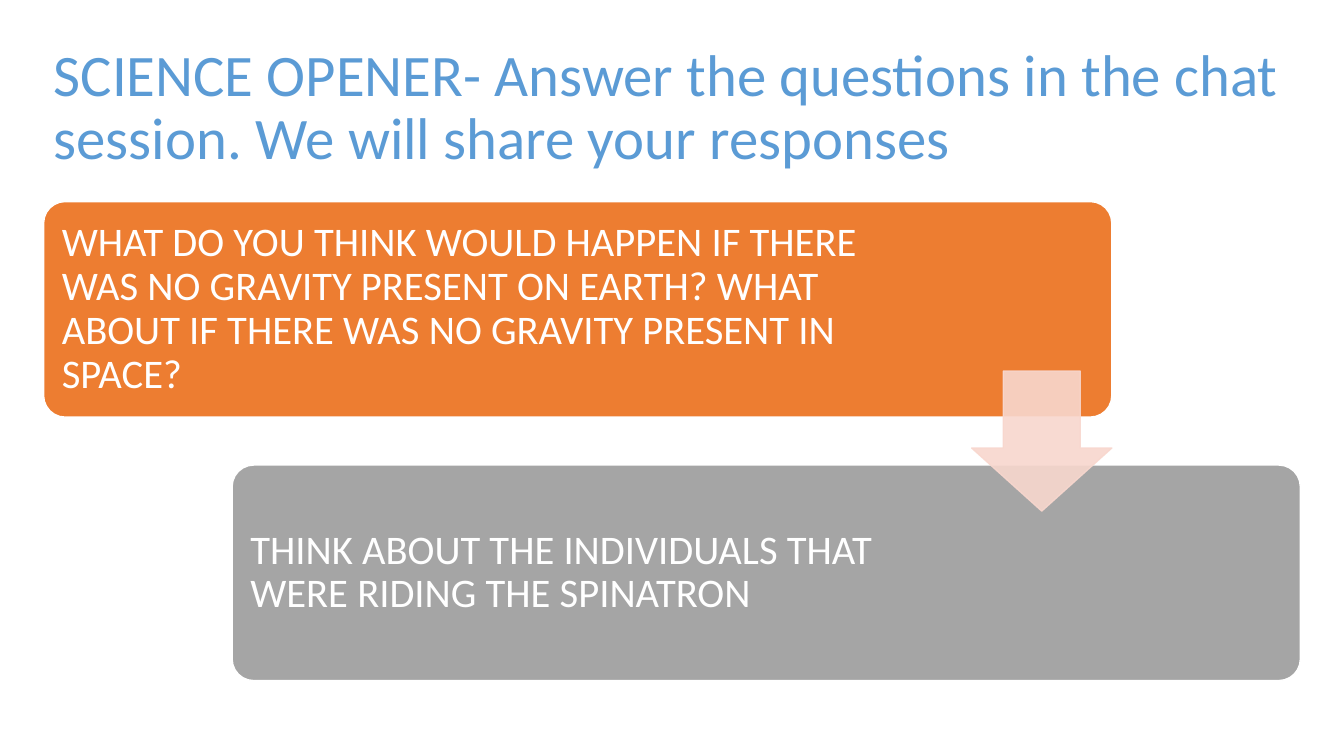
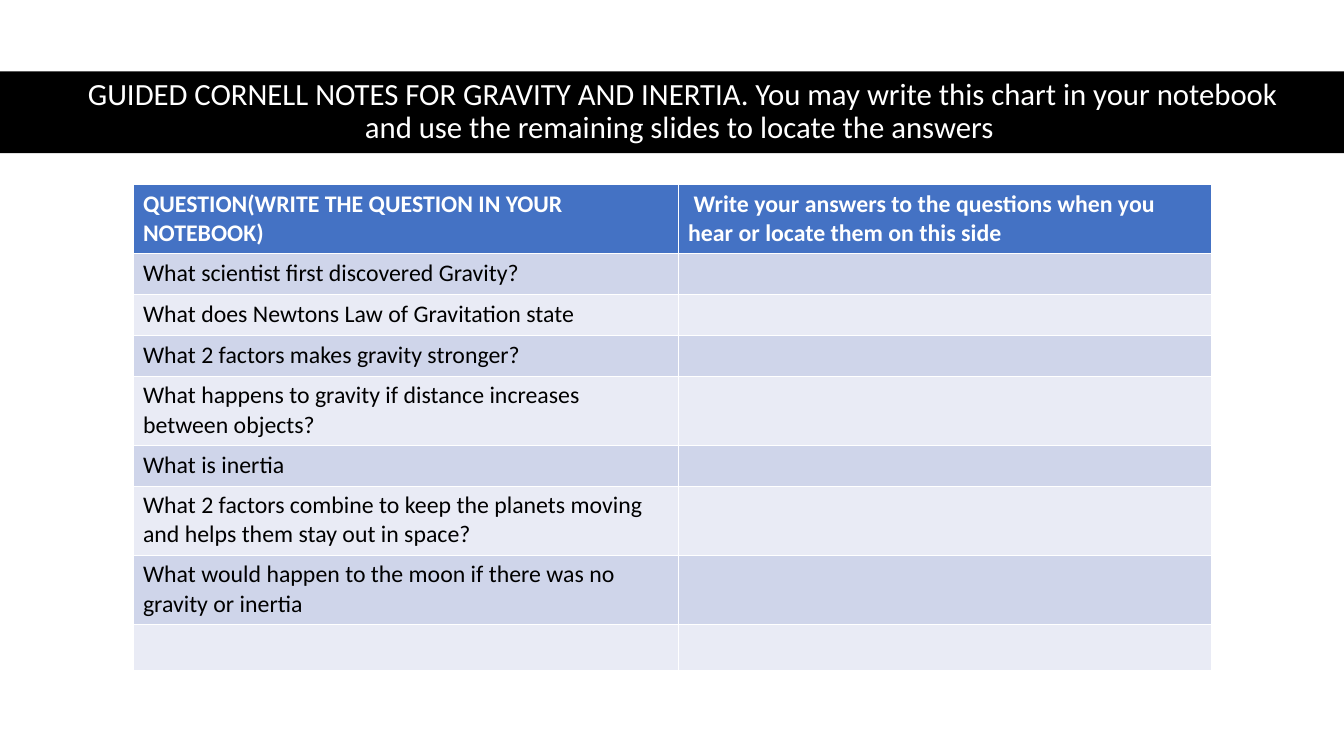
from lxml.etree import SubElement
from pptx import Presentation
from pptx.dml.color import RGBColor
from pptx.enum.shapes import MSO_SHAPE
from pptx.enum.text import MSO_ANCHOR, MSO_AUTO_SIZE, PP_ALIGN
from pptx.oxml.ns import qn
from pptx.util import Cm, Pt

# Shared look
FONT = "Calibri"
WHITE = RGBColor(0xFF, 0xFF, 0xFF)
BLACK = RGBColor(0x00, 0x00, 0x00)
SKY = RGBColor(0x5B, 0x9B, 0xD5)
ORANGE = RGBColor(0xED, 0x7D, 0x31)
GRAY = RGBColor(0xA5, 0xA5, 0xA5)
PINK = RGBColor(0xF8, 0xD7, 0xCE)
BLUE = RGBColor(0x44, 0x72, 0xC4)
BANDS = (RGBColor(0xCF, 0xD5, 0xEA), RGBColor(0xE9, 0xEB, 0xF5))

WIDE, HIGH = Cm(33.87), Cm(19.05)

# Fill, text and right inset of each card
CARDS = [
    (ORANGE, "WHAT DO YOU THINK WOULD HAPPEN IF THERE WAS NO GRAVITY PRESENT "
             "ON EARTH? WHAT ABOUT IF THERE WAS NO GRAVITY PRESENT IN SPACE?",
     Cm(5.6)),
    (GRAY, "THINK ABOUT THE INDIVIDUALS THAT WERE RIDING THE SPINATRON",
     Cm(8.58)),
]

HEADS = ["QUESTION(WRITE THE QUESTION IN YOUR NOTEBOOK)",
         " Write your answers to the questions when you hear or locate them "
         "on this side"]
# Question and number of lines it takes
ASKS = [
    ("What scientist first discovered Gravity?", 1),
    ("What does Newtons Law of Gravitation state", 1),
    ("What 2 factors makes gravity stronger?", 1),
    ("What happens to gravity if distance increases between objects?", 2),
    ("What is inertia", 1),
    ("What 2 factors combine to keep the planets moving and helps them "
     "stay out in space?", 2),
    ("What would happen to the moon if there was no gravity or inertia", 2),
]
ROWS = {1: Cm(1.03), 2: Cm(1.74)}
LAST = Cm(1.17)


def style(para, size, color, bold=False, align=PP_ALIGN.LEFT):
    para.alignment = align
    font = para.font
    font.name, font.size, font.bold = FONT, Pt(size), bold
    font.color.rgb = color


def add_slide(deck, text, box, size, color, align=PP_ALIGN.LEFT):
    """Add a title-only slide and format its title."""
    slide = deck.slides.add_slide(deck.slide_layouts[5])
    title = slide.shapes.title
    title.left, title.top, title.width, title.height = box
    frame = title.text_frame
    frame.text = text
    frame.word_wrap = True
    frame.auto_size = MSO_AUTO_SIZE.NONE
    frame.vertical_anchor = MSO_ANCHOR.MIDDLE
    para = frame.paragraphs[0]
    para.line_spacing = 0.9
    style(para, size, color, align=align)
    return slide


def add_block(slide, kind, box, fill, line=None):
    block = slide.shapes.add_shape(kind, *box)
    block.shadow.inherit = False
    block.fill.solid()
    block.fill.fore_color.rgb = fill
    if line is None:
        block.line.fill.background()
    else:
        block.line.color.rgb = line
        block.line.width = Pt(1)
    return block


def add_card(slide, box, fill, text, right):
    card = add_block(slide, MSO_SHAPE.ROUNDED_RECTANGLE, box, fill, WHITE)
    card.adjustments[0] = 0.1
    frame = card.text_frame
    frame.word_wrap = True
    frame.vertical_anchor = MSO_ANCHOR.MIDDLE
    frame.margin_left = frame.margin_top = frame.margin_bottom = Cm(0.3)
    frame.margin_right = right
    frame.text = text
    para = frame.paragraphs[0]
    para.line_spacing = 0.9
    style(para, 29, WHITE)


def add_steps(slide, left, top, width, height):
    """Two cards in opposite corners of the box, joined by an arrow."""
    wide, high = int(width * 0.85), int(height * 0.45)
    for i, (fill, text, right) in enumerate(CARDS):
        box = (left + i * (width - wide), top + i * (height - high),
               wide, high)
        add_card(slide, box, fill, text, right)
    # Arrow: flush with the first card, centred between the two
    side = int(high * 0.65)
    box = (left + wide - side, top + (height - side) // 2, side, side)
    arrow = add_block(slide, MSO_SHAPE.DOWN_ARROW, box, PINK, PINK)
    arrow.adjustments[0] = 0.45
    arrow.adjustments[1] = 0.55
    # The preset takes head length first in the file's order of guides
    arrow.adjustments[0], arrow.adjustments[1] = 0.55, 0.45
    for color in arrow.element.spPr.iter(qn("a:srgbClr")):
        SubElement(color, qn("a:alpha")).set("val", "90000")


def add_notes(slide, left, top, width):
    """Table of questions with an empty answer column."""
    rows = [(HEADS, ROWS[2])]
    rows += [([ask, ""], ROWS[lines]) for ask, lines in ASKS]
    rows.append((["", ""], LAST))
    total = sum(high for _, high in rows)
    table = slide.shapes.add_table(len(rows), 2, left, top, width,
                                   total).table
    first = Cm(13.74)
    table.columns[0].width = first
    table.columns[1].width = width - first
    for r, (texts, high) in enumerate(rows):
        table.rows[r].height = high
        head = r == 0
        for cell, text in zip(table.rows[r].cells, texts):
            cell.text = text
            cell.fill.solid()
            cell.fill.fore_color.rgb = BLUE if head else BANDS[(r - 1) % 2]
            style(cell.text_frame.paragraphs[0], 17,
                  WHITE if head else BLACK, bold=head)


def opener(deck):
    slide = add_slide(
        deck,
        "SCIENCE OPENER- Answer the questions in the chat session. "
        "We will share your responses",
        (Cm(1.1), Cm(0.9), Cm(31.7), Cm(3.68)), 42, SKY)
    add_steps(slide, Cm(1.1), Cm(5.08), Cm(31.67), Cm(12.07))


def notes(deck):
    top, high = Cm(1.8), Cm(2.06)
    slide = add_slide(
        deck,
        " GUIDED CORNELL NOTES FOR GRAVITY AND INERTIA. You may write this "
        "chart in your notebook and use the remaining slides to locate the "
        "answers",
        (Cm(1.55), top, Cm(31.14), high), 22, WHITE, PP_ALIGN.CENTER)
    # Black band behind the title
    band = add_block(slide, MSO_SHAPE.RECTANGLE, (0, top, WIDE, high), BLACK)
    slide.shapes.title.element.addprevious(band.element)
    add_notes(slide, Cm(3.35), Cm(4.65), Cm(27.18))


def main():
    deck = Presentation()
    deck.slide_width, deck.slide_height = WIDE, HIGH
    opener(deck)
    notes(deck)
    deck.save("out.pptx")


if __name__ == "__main__":
    main()
